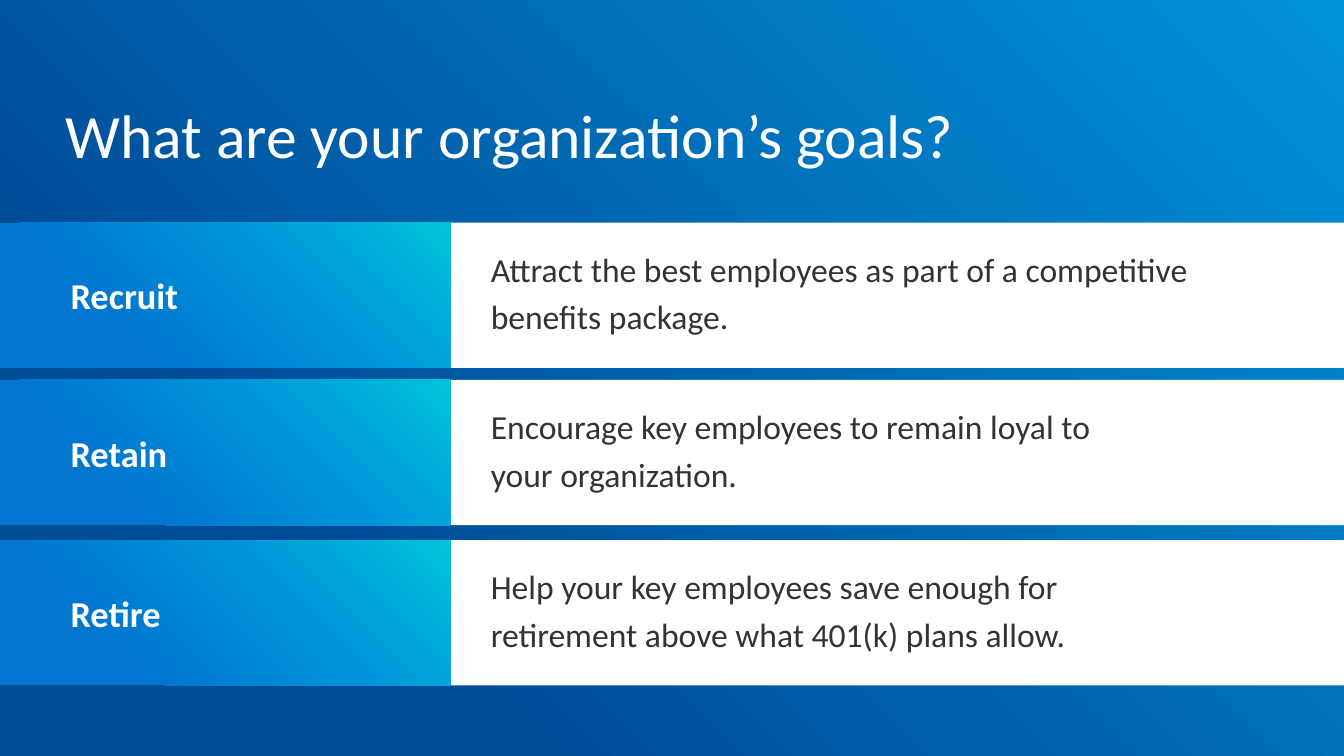
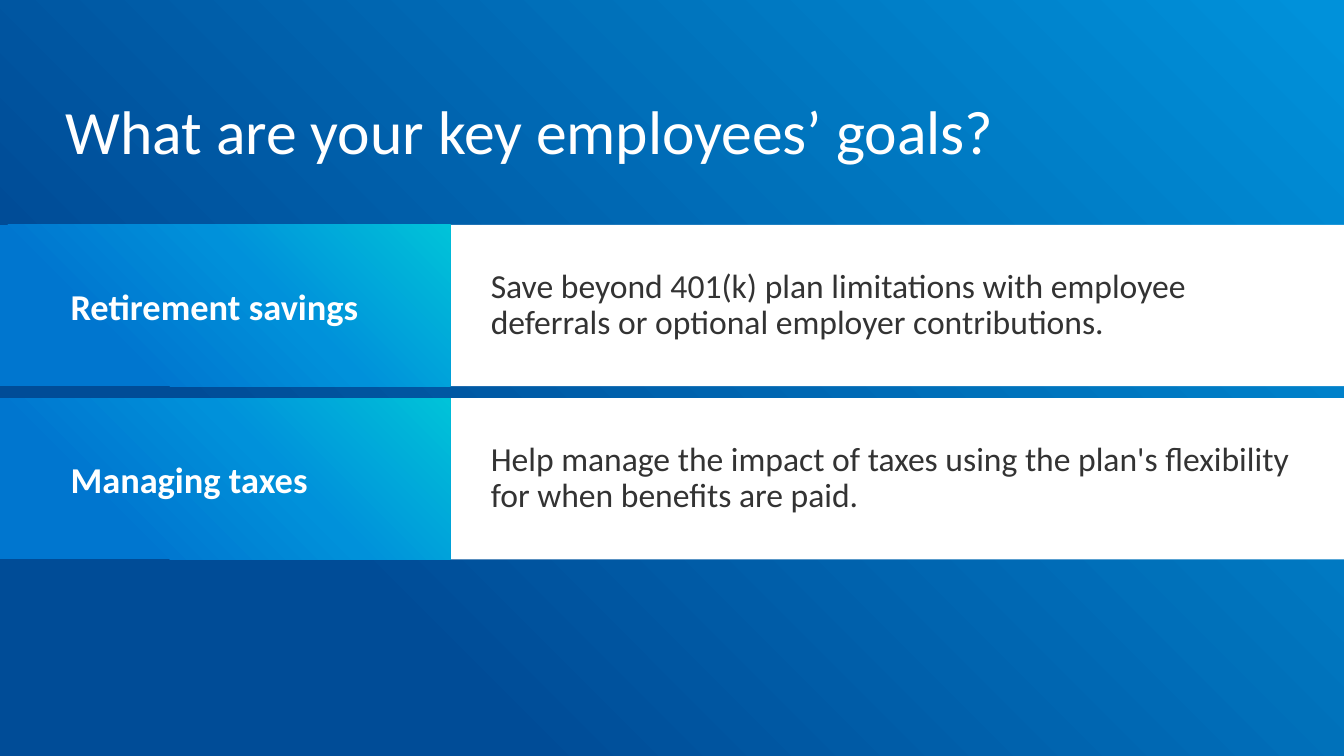
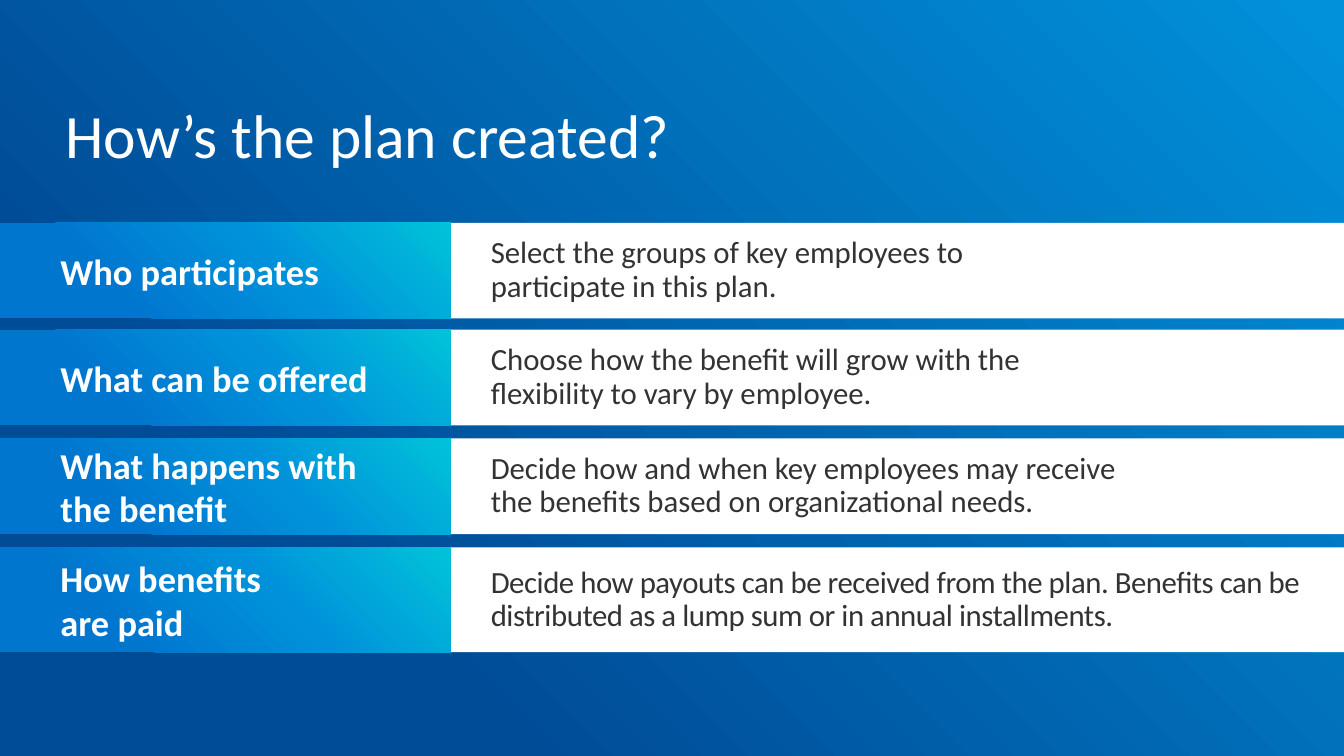
"""Build three slides of labelled goal rows on a blue gradient."""
from lxml.etree import SubElement
from pptx import Presentation
from pptx.dml.color import RGBColor
from pptx.enum.shapes import MSO_SHAPE as SHAPE
from pptx.enum.text import MSO_ANCHOR as ANCHOR, PP_ALIGN as ALIGN
from pptx.oxml.ns import qn
from pptx.util import Pt

NAVY = RGBColor(0x00, 0x4C, 0x97)
BLUE = RGBColor(0x00, 0x76, 0xCF)
SKY = RGBColor(0x00, 0x91, 0xDA)
TEAL = RGBColor(0x00, 0xC3, 0xD9)
WHITE = RGBColor(0xFF, 0xFF, 0xFF)
INK = RGBColor(0x33, 0x33, 0x33)

BACKDROP = ((25, NAVY), (99, SKY))
LABEL_FILL = ((25, BLUE), (60, SKY), (100, TEAL))
WIDTH, HEIGHT, LABEL_WIDTH = 960, 540, 321.8

SLIDES = (
    dict(title="What are your organization’s goals?", title_top=69.1,
         size=24, indent=50.4, rows=(
             (159.1, 103.7, "Recruit",
              "Attract the best employees as part of a competitive\nbenefits package."),
             (271.4, 103.7, "Retain",
              "Encourage key employees to remain loyal to\nyour organization."),
             (385.9, 103.7, "Retire",
              "Help your key employees save enough for\n"
              "retirement above what 401(k) plans allow."))),
    dict(title="What are your key employees’ goals?", title_top=66.2,
         size=24, indent=50.4, rows=(
             (160.6, 115.2, "Retirement savings",
              "Save beyond 401(k) plan limitations with employee "
              "deferrals or optional employer contributions."),
             (284.4, 115.2, "Managing taxes",
              "Help manage the impact of taxes using the plan's "
              "flexibility for when benefits are paid."))),
    dict(title="How’s the plan created?", title_top=69.1,
         size=22, indent=43.2, rows=(
             (159.1, 68.4, "Who participates",
              "Select the groups of key employees to\vparticipate in this plan."),
             (235.4, 68.4, "What can be offered",
              "Choose how the benefit will grow with the\v"
              "flexibility to vary by employee."),
             (313.2, 68.4, "What happens with the benefit",
              "Decide how and when key employees may receive\v"
              "the benefits based on organizational needs."),
             (391, 74.9, "How benefits\vare paid",
              "Decide how payouts can be received from the plan. Benefits can be "
              "distributed as a lump sum or in annual installments.", -30))),
)


def set_all(target, values):
    for name, value in values.items():
        setattr(target, name, value)


def set_gradient(fill, element, stops):
    fill.gradient()
    fill.gradient_angle = 45
    stop_list = next(element.iter(qn("a:gsLst")))
    for old in list(stop_list):
        stop_list.remove(old)
    for position, color in stops:
        stop = SubElement(stop_list, qn("a:gs"), pos=str(position * 1000))
        SubElement(stop, qn("a:srgbClr"), val=str(color))


def write_text(sp, text, size, color, insets, anchor, bold=False,
               paragraph=None, tracking=None):
    tf = sp.text_frame
    names = ("margin_left", "margin_top", "margin_right", "margin_bottom")
    set_all(tf, dict(zip(names, map(Pt, insets)),
                     word_wrap=True, vertical_anchor=anchor))
    tf.text = text
    for p in tf.paragraphs:
        set_all(p, dict(alignment=ALIGN.LEFT, **(paragraph or {})))
        for r in p.runs:
            set_all(r.font, dict(name="Calibri", size=Pt(size), bold=bold))
            r.font.color.rgb = color
            if tracking:
                r.font._element.set("spc", str(tracking))


def add_title(s, text, top):
    sp = s.shapes.add_textbox(Pt(46.8), Pt(top), Pt(864), Pt(53))
    write_text(sp, text, 44, WHITE, (0, 0, 0, 0), ANCHOR.TOP)


def add_block(s, left, top, width, height):
    sp = s.shapes.add_shape(SHAPE.RECTANGLE, Pt(left), Pt(top), Pt(width), Pt(height))
    sp.shadow.inherit = False
    sp.line.fill.background()
    return sp


def add_row(s, size, indent, top, height, label, detail, tracking=None):
    sp = add_block(s, LABEL_WIDTH, top, WIDTH - LABEL_WIDTH, height)
    sp.fill.solid()
    sp.fill.fore_color.rgb = WHITE
    write_text(sp, detail, size, INK, (28.8,) * 4, ANCHOR.MIDDLE, tracking=tracking,
               paragraph=dict(line_spacing=0.9, space_after=Pt(8)))
    sp = add_block(s, 0, top, LABEL_WIDTH, height)
    set_gradient(sp.fill, sp._element, LABEL_FILL)
    write_text(sp, label, 26, WHITE, (indent, 3.6, 28.8, 3.6), ANCHOR.MIDDLE, bold=True)


def main():
    prs = Presentation()
    set_all(prs, dict(slide_width=Pt(WIDTH), slide_height=Pt(HEIGHT)))
    master = prs.slide_master
    set_gradient(master.background.fill, master._element, BACKDROP)
    for content in SLIDES:
        s = prs.slides.add_slide(prs.slide_layouts[6])
        add_title(s, content["title"], content["title_top"])
        for row in content["rows"]:
            add_row(s, content["size"], content["indent"], *row)
    prs.save("out.pptx")


if __name__ == "__main__":
    main()
